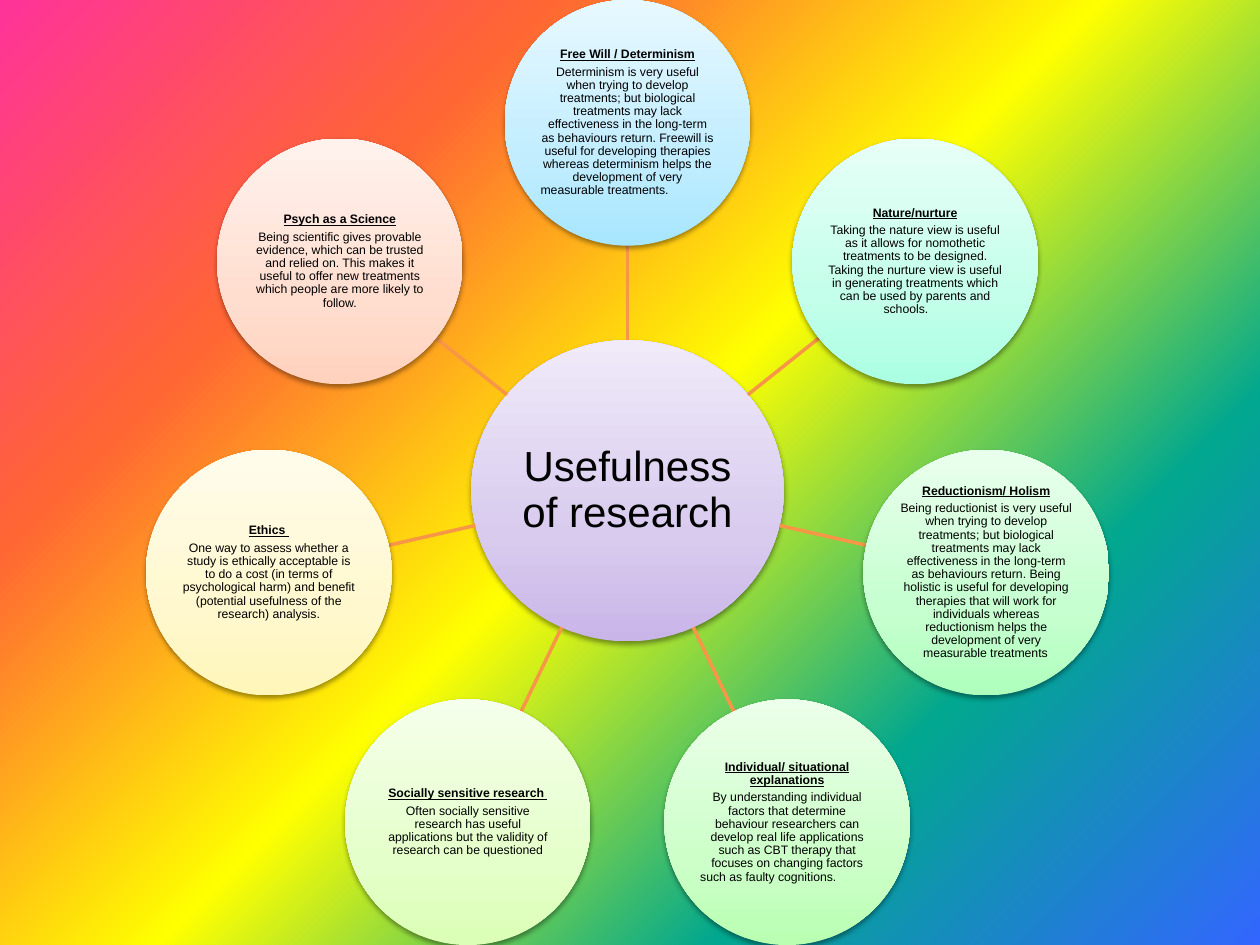
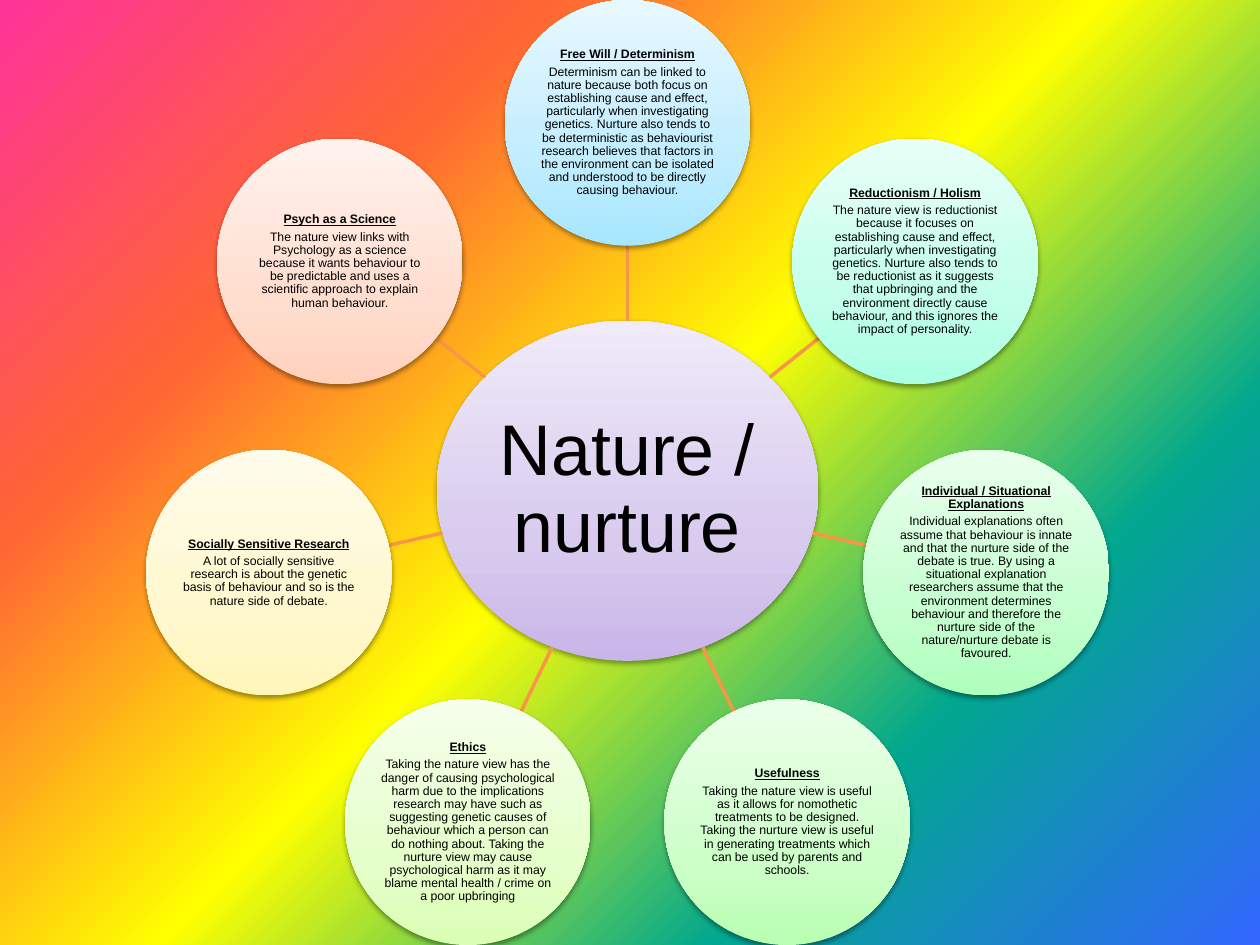
from collections import namedtuple
from math import cos, hypot, pi, sin

from lxml.etree import SubElement
from pptx import Presentation
from pptx.dml.color import RGBColor
from pptx.enum.shapes import MSO_CONNECTOR, MSO_SHAPE
from pptx.enum.text import MSO_ANCHOR, PP_ALIGN
from pptx.oxml.ns import qn
from pptx.util import Inches, Pt

Box = namedtuple("Box", "left top width height")

COLORS = {"text": "000000", "spoke": "F79646", "shadow": "000000"}
RAINBOW = {0: "FF3399", 25: "FF6633", 50: "FFFF00", 75: "01A78F", 100: "3366FF"}
HUB_GRADIENT = {0: "C9B5E8", 35: "D8CBEE", 100: "F0EAF9"}
TOPIC_GRADIENTS = [  # clockwise from the top
    {0: "A7E6FF", 35: "C1EDFF", 100: "E7F8FF"},
    {0: "ABFFE3", 35: "C3FFEA", 100: "E8FFF7"},
    {0: "AFFFBD", 35: "C6FFD0", 100: "E9FFED"},
    {0: "B9FFB2", 35: "CDFFC9", 100: "ECFFEA"},
    {0: "DBFFB6", 35: "E5FFCB", 100: "F5FFEB"},
    {0: "FFF6B9", 35: "FFF8CE", 100: "FFFCEC"},
    {0: "FFD2BD", 35: "FFDED0", 100: "FFF2ED"},
]

FONT = "Arial"
TOPIC_SIZE = 7
TOPIC_DIAMETER = 1.95
ORBIT_RADIUS = 2.92
DIAGRAM_BOX = Box(1.16, 0, 7.64, 7.5)

USEFULNESS_TOPICS = [
    ("Free Will / Determinism",
     "Determinism is very useful when trying to develop treatments; but biological "
     "treatments may lack effectiveness in the long-term as behaviours return. "
     "Freewill is useful for developing therapies whereas determinism helps the "
     "development of very measurable treatments. \t"),
    ("Nature/nurture",
     "Taking the nature view is useful as it allows for nomothetic treatments to be "
     "designed. Taking the nurture view is useful in generating treatments which can "
     "be used by parents and schools.\t"),
    ("Reductionism/ Holism",
     "Being reductionist is very useful when trying to develop treatments; but "
     "biological treatments may lack effectiveness in the long-term as behaviours "
     "return. Being holistic is useful for developing therapies that will work for "
     "individuals whereas reductionism helps the development of very measurable "
     "treatments\t"),
    ("Individual/ situational explanations",
     "By understanding individual factors that determine behaviour researchers can "
     "develop real life applications such as CBT therapy that focuses on changing "
     "factors such as faulty cognitions. \t"),
    ("Socially sensitive research ",
     "Often socially sensitive research has useful applications but the validity of "
     "research can be questioned"),
    ("Ethics ",
     "One way to assess whether a study is ethically acceptable is to do a cost (in "
     "terms of psychological harm) and benefit (potential usefulness of the research) "
     "analysis."),
    ("Psych as a Science",
     "Being scientific gives provable evidence, which can be trusted and relied on. "
     "This makes it useful to offer new treatments which people are more likely to "
     "follow."),
]

NATURE_TOPICS = [
    ("Free Will / Determinism",
     "Determinism can be linked to nature because both focus on establishing cause and "
     "effect, particularly when investigating genetics. Nurture also tends to be "
     "deterministic as behaviourist research believes that factors in the environment "
     "can be isolated and understood to be directly causing behaviour."),
    ("Reductionism / Holism",
     "The nature view is reductionist because it focuses on establishing cause and "
     "effect, particularly when investigating genetics. Nurture also tends to be "
     "reductionist as it suggests that upbringing and the environment directly cause "
     "behaviour, and this ignores the impact of personality."),
    ("Individual / Situational Explanations",
     "Individual explanations often assume that behaviour is innate and that the "
     "nurture side of the debate is true. By using a situational explanation "
     "researchers assume that the environment determines behaviour and therefore the "
     "nurture side of the nature/nurture debate is favoured."),
    ("Usefulness",
     "Taking the nature view is useful as it allows for nomothetic treatments to be "
     "designed. Taking the nurture view is useful in generating treatments which can "
     "be used by parents and schools."),
    ("Ethics",
     "Taking the nature view has the danger of causing psychological harm due to the "
     "implications research may have such as suggesting genetic causes of behaviour "
     "which a person can do nothing about. Taking the nurture view may cause "
     "psychological harm as it may blame mental health / crime on a poor upbringing"),
    ("Socially Sensitive Research",
     "A lot of socially sensitive research is about the genetic basis of behaviour and "
     "so is the nature side of debate."),
    ("Psych as a Science",
     "The nature view links with Psychology as a science because it wants behaviour to "
     "be predictable and uses a scientific approach to explain human behaviour."),
]


def set_gradient(fill, element, stops, angle):
    """Fill with {percent: colour}; the angle runs counter-clockwise."""
    fill.gradient()
    fill.gradient_angle = angle
    stop_list = next(element.iter(qn("a:gsLst")))
    for stop in list(stop_list):
        stop_list.remove(stop)
    for percent, color in stops.items():
        stop = SubElement(stop_list, qn("a:gs"), pos=str(percent * 1000))
        SubElement(stop, qn("a:srgbClr"), val=color)


def add_soft_shadow(shape):
    shape.shadow.inherit = False
    effects = shape.element.spPr.find(qn("a:effectLst"))
    shadow = SubElement(effects, qn("a:outerShdw"), blurRad=str(Pt(3.1)),
                        dist=str(Pt(1.6)), dir="5400000", rotWithShape="0")
    color = SubElement(shadow, qn("a:srgbClr"), val=COLORS["shadow"])
    SubElement(color, qn("a:alpha"), val="38000")


def format_paragraph(paragraph, size, heading=False):
    paragraph.alignment = PP_ALIGN.CENTER
    paragraph.line_spacing = 0.9
    space_after = SubElement(paragraph._p.get_or_add_pPr(), qn("a:spcAft"))
    SubElement(space_after, qn("a:spcPct"), val="35000")
    for run in paragraph.runs:
        run.font.name = FONT
        run.font.size = Pt(size)
        run.font.bold = run.font.underline = heading
        run.font.color.rgb = RGBColor.from_string(COLORS["text"])


def add_bubble(slide, center, width, height, stops, inset):
    """Add an empty shaded ellipse and return its text frame."""
    x, y = center
    bubble = slide.shapes.add_shape(
        MSO_SHAPE.OVAL, Inches(x - width / 2), Inches(y - height / 2),
        Inches(width), Inches(height))
    set_gradient(bubble.fill, bubble.element, stops, 90)
    bubble.line.fill.background()
    add_soft_shadow(bubble)
    frame = bubble.text_frame
    frame.word_wrap = True
    frame.vertical_anchor = MSO_ANCHOR.MIDDLE
    frame.margin_left = frame.margin_right = Inches(inset)
    frame.margin_top = frame.margin_bottom = Inches(inset)
    return frame


def add_hub(slide, center, width, height, title, size):
    frame = add_bubble(slide, center, width, height, HUB_GRADIENT, 0.02)
    frame.text = title
    format_paragraph(frame.paragraphs[0], size)


def add_topic(slide, center, heading, body, stops):
    frame = add_bubble(slide, center, TOPIC_DIAMETER, TOPIC_DIAMETER, stops, 0)
    frame.text = heading
    format_paragraph(frame.paragraphs[0], TOPIC_SIZE, heading=True)
    paragraph = frame.add_paragraph()
    paragraph.text = body
    format_paragraph(paragraph, TOPIC_SIZE)


def add_spoke(slide, start, end):
    spoke = slide.shapes.add_connector(
        MSO_CONNECTOR.STRAIGHT, *(Inches(value) for value in (*start, *end)))
    spoke.line.color.rgb = RGBColor.from_string(COLORS["spoke"])
    spoke.line.width = Pt(2)
    SubElement(spoke.element.spPr, qn("a:effectLst"))


def add_radial_diagram(slide, box, hub_width, hub_height, title, title_size, topics):
    center_x = box.left + box.width / 2
    center_y = box.top + TOPIC_DIAMETER / 2 + ORBIT_RADIUS

    def point_at(angle, distance):
        return center_x + distance * sin(angle), center_y - distance * cos(angle)

    add_hub(slide, (center_x, center_y), hub_width, hub_height, title, title_size)
    for index, (heading, body) in enumerate(topics):
        angle = 2 * pi * index / len(topics)
        hub_edge = 0.5 / hypot(sin(angle) / hub_width, cos(angle) / hub_height)
        topic_edge = ORBIT_RADIUS - TOPIC_DIAMETER / 2
        add_spoke(slide, point_at(angle, hub_edge), point_at(angle, topic_edge))
        add_topic(slide, point_at(angle, ORBIT_RADIUS), heading, body,
                  TOPIC_GRADIENTS[index])


def add_debate_slide(presentation, *diagram):
    slide = presentation.slides.add_slide(presentation.slide_layouts[6])
    set_gradient(slide.background.fill, slide.element, RAINBOW, 315)
    add_radial_diagram(slide, DIAGRAM_BOX, *diagram)


def main():
    presentation = Presentation()
    presentation.slide_width = Inches(10)
    presentation.slide_height = Inches(7.5)
    add_debate_slide(presentation, 2.48, 2.39, "Usefulness of research", 24,
                     USEFULNESS_TOPICS)
    add_debate_slide(presentation, 3.03, 2.7, "Nature / nurture", 41, NATURE_TOPICS)
    presentation.save("out.pptx")


if __name__ == "__main__":
    main()
